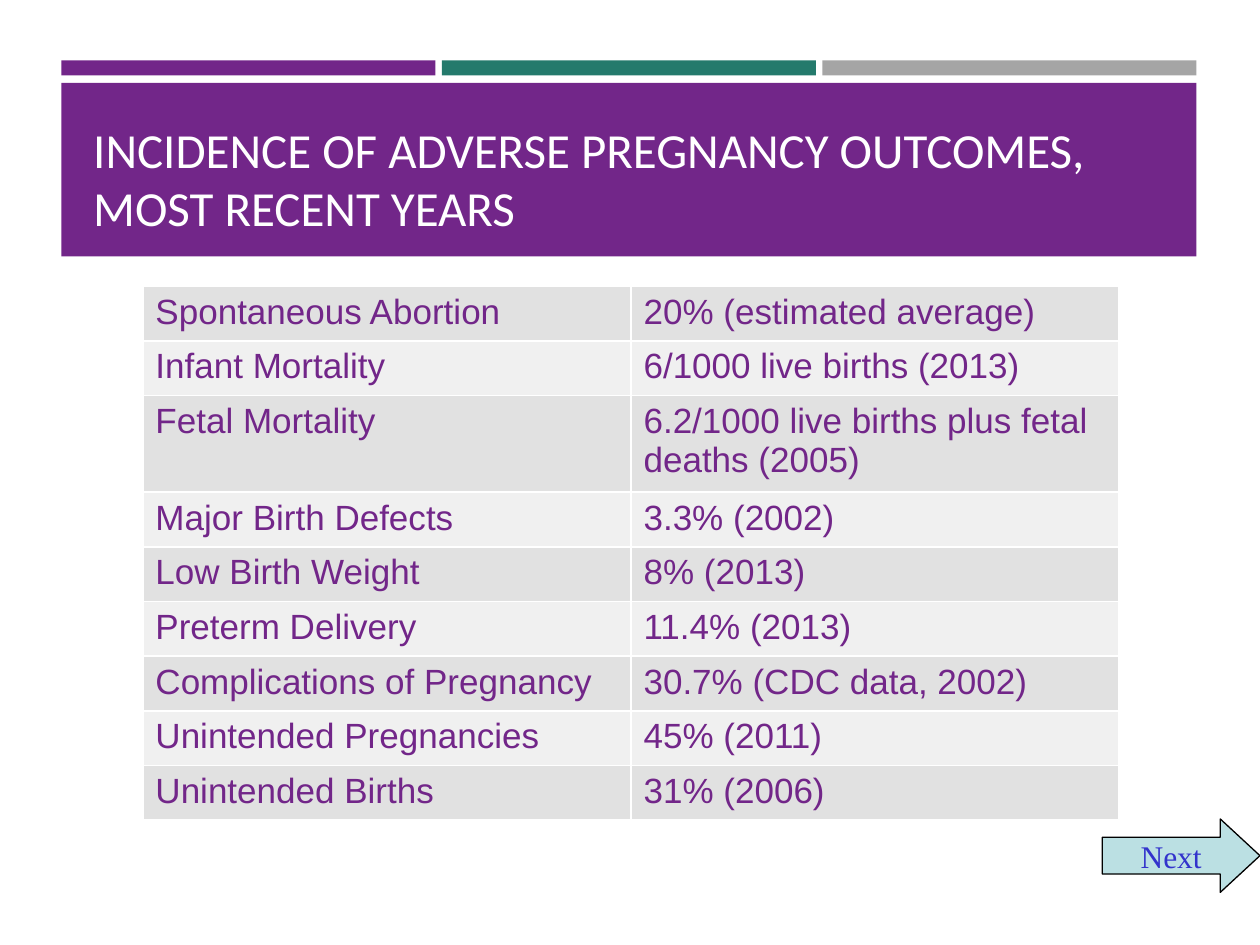
import dataclasses

import pptx
import pptx.dml.color
import pptx.enum.shapes
import pptx.enum.text
import pptx.oxml
import pptx.oxml.ns
import pptx.util

Cm = pptx.util.Cm
Pt = pptx.util.Pt
ShapeKind = pptx.enum.shapes.MSO_SHAPE
Align = pptx.enum.text.PP_ALIGN
Anchor = pptx.enum.text.MSO_ANCHOR

PURPLE = "722689"
GREEN = "247A6C"
GREY = "A5A5A5"
WHITE = "FFFFFF"
BAND_FILLS = ("E1E1E1", "F0F0F0")

MARGIN_LEFT = 1.24
BAR_PITCH = 7.67
ROW_HEIGHT = 1.1
TALL_ROW_HEIGHT = 1.94
COLUMN_WIDTH = 9.84


@dataclasses.dataclass(frozen=True)
class Box:
    left: float
    top: float
    width: float
    height: float

    def lengths(self):
        return Cm(self.left), Cm(self.top), Cm(self.width), Cm(self.height)


@dataclasses.dataclass(frozen=True)
class Outcome:
    name: str
    incidence: str
    row_height: float = ROW_HEIGHT


OUTCOMES = (
    Outcome("Spontaneous Abortion", "20% (estimated average)"),
    Outcome("Infant Mortality", "6/1000 live births (2013)"),
    Outcome(
        "Fetal Mortality",
        "6.2/1000 live births plus fetal deaths (2005)",
        TALL_ROW_HEIGHT,
    ),
    Outcome("Major Birth Defects", "3.3% (2002)"),
    Outcome("Low Birth Weight", "8% (2013)"),
    Outcome("Preterm Delivery", "11.4% (2013)"),
    Outcome("Complications of Pregnancy", "30.7% (CDC data, 2002)"),
    Outcome("Unintended Pregnancies", "45% (2011)"),
    Outcome("Unintended Births", "31% (2006)"),
)


def color(value: str):
    return pptx.dml.color.RGBColor.from_string(value)


def write_text(frame, text: str, *, font: str, size: float, fill: str,
               align=Align.LEFT, anchor=Anchor.TOP, wrap: bool = True) -> None:
    frame.word_wrap = wrap
    frame.vertical_anchor = anchor
    paragraph = frame.paragraphs[0]
    paragraph.alignment = align
    run = paragraph.add_run()
    run.text = text
    run.font.name = font
    run.font.size = Pt(size)
    run.font.color.rgb = color(fill)


def draw_shape(slide, kind, box: Box, fill: str, line: str | None = None):
    shape = slide.shapes.add_shape(kind, *box.lengths())
    shape.shadow.inherit = False
    shape.fill.solid()
    shape.fill.fore_color.rgb = color(fill)
    if line:
        shape.line.color.rgb = color(line)
        shape.line.width = Pt(0.75)
    else:
        shape.line.fill.background()
    return shape


def draw_borders(cell, line: str) -> None:
    properties = cell._tc.get_or_add_tcPr()
    for index, side in enumerate(("lnL", "lnR", "lnT", "lnB")):
        border = pptx.oxml.parse_xml(
            f'<a:{side} {pptx.oxml.ns.nsdecls("a")} w="{Pt(1)}">'
            f'<a:solidFill><a:srgbClr val="{line}"/></a:solidFill></a:{side}>'
        )
        properties.insert(index, border)


def draw_table(slide, outcomes: tuple[Outcome, ...]) -> None:
    height = sum(outcome.row_height for outcome in outcomes)
    box = Box(2.88, 5.77, 2 * COLUMN_WIDTH, height)
    table = slide.shapes.add_table(len(outcomes), 2, *box.lengths()).table
    table.first_row = False
    table.horz_banding = False
    for column in table.columns:
        column.width = Cm(COLUMN_WIDTH)
    for index, outcome in enumerate(outcomes):
        row = table.rows[index]
        row.height = Cm(outcome.row_height)
        for cell, text in zip(row.cells, (outcome.name, outcome.incidence)):
            cell.fill.solid()
            cell.fill.fore_color.rgb = color(BAND_FILLS[index % 2])
            draw_borders(cell, WHITE)
            write_text(cell.text_frame, text, font="Arial", size=20, fill=PURPLE)


def main() -> None:
    presentation = pptx.Presentation()
    presentation.slide_width = Cm(25.4)
    presentation.slide_height = Cm(19.05)
    slide = presentation.slides.add_slide(presentation.slide_layouts[6])

    for index, fill in enumerate((PURPLE, GREEN, GREY)):
        bar = Box(MARGIN_LEFT + index * BAR_PITCH, 1.22, 7.54, 0.3)
        draw_shape(slide, ShapeKind.RECTANGLE, bar, fill)
    draw_shape(slide, ShapeKind.RECTANGLE, Box(MARGIN_LEFT, 1.67, 22.88, 3.5), PURPLE)

    title = slide.shapes.add_textbox(*Box(1.63, 1.9, 22.2, 3.0).lengths())
    write_text(
        title.text_frame,
        "INCIDENCE OF ADVERSE PREGNANCY OUTCOMES, MOST RECENT YEARS",
        font="Calibri", size=28, fill=WHITE, anchor=Anchor.BOTTOM,
    )

    draw_table(slide, OUTCOMES)

    arrow = draw_shape(
        slide, ShapeKind.RIGHT_ARROW, Box(22.22, 16.51, 3.18, 1.48), "BBE0E3", "000000"
    )
    arrow.adjustments[1] = 0.54
    write_text(
        arrow.text_frame, "Next", font="Times New Roman", size=18, fill="3333CC",
        align=Align.CENTER, anchor=Anchor.MIDDLE, wrap=False,
    )

    presentation.save("out.pptx")


if __name__ == "__main__":
    main()
